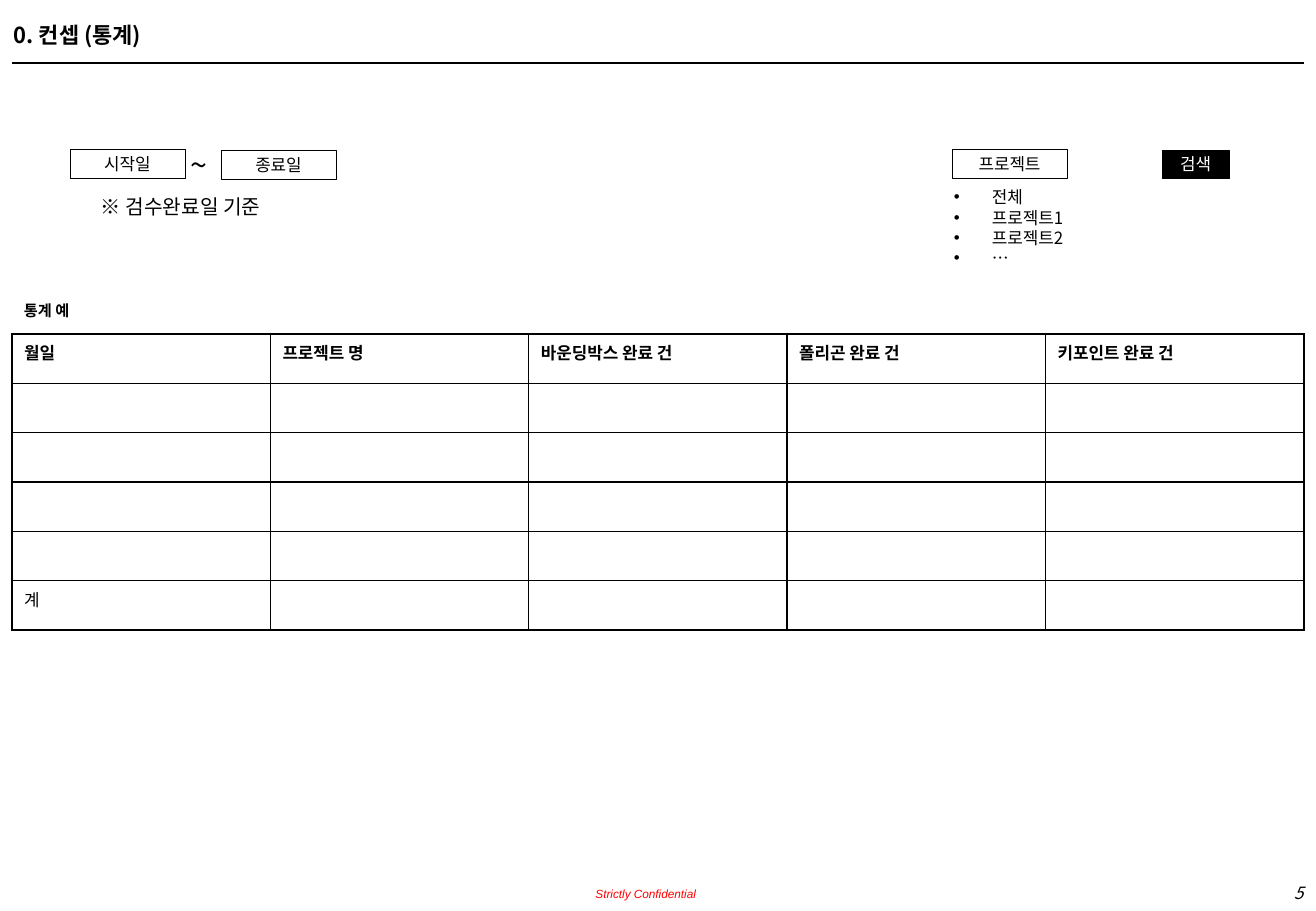
from lxml.etree import SubElement
from pptx import Presentation
from pptx.dml.color import RGBColor
from pptx.enum.shapes import MSO_CONNECTOR, MSO_SHAPE
from pptx.enum.text import MSO_ANCHOR, PP_ALIGN
from pptx.oxml import parse_xml
from pptx.oxml.ns import nsdecls, qn
from pptx.util import Pt

EMU_PER_PX = 914400 / 121.5
BLACK = RGBColor(0x00, 0x00, 0x00)
WHITE = RGBColor(0xFF, 0xFF, 0xFF)
RED = RGBColor(0xFF, 0x00, 0x00)

HEADERS = ["월일", "프로젝트 명", "바운딩박스 완료 건", "폴리곤 완료 건", "키포인트 완료 건"]
ROW_COUNT = 6
PROJECTS = ["전체", "프로젝트1", "프로젝트2", "…"]


def px(length):
    return round(length * EMU_PER_PX)


def write_text(frame, text, size=10, bold=False, italic=False, color=BLACK,
               align=PP_ALIGN.LEFT, font_name="Noto Sans CJK KR"):
    """Fill a text frame, one paragraph for each line of the text."""
    for index, line in enumerate(text.split("\n")):
        paragraph = frame.paragraphs[0] if index == 0 else frame.add_paragraph()
        paragraph.alignment = align
        if not line:
            # An empty paragraph takes its height from its end mark.
            SubElement(paragraph._p, qn("a:endParaRPr"), sz=str(size * 100))
            continue
        run = paragraph.add_run()
        run.text = line
        font = run.font
        font.name = font_name
        font.size = Pt(size)
        font.bold = bold
        font.italic = italic
        font.color.rgb = color
        SubElement(font._element, qn("a:ea"), typeface=font_name)


class SlideBuilder:
    def __init__(self, slide, line_color=BLACK):
        self.slide = slide
        self.line_color = line_color

    def text(self, left, top, width, height, text, wrap=True, inset=True,
             anchor=MSO_ANCHOR.TOP, **text_format):
        box = self.slide.shapes.add_textbox(px(left), px(top), px(width), px(height))
        frame = box.text_frame
        frame.word_wrap = wrap
        frame.vertical_anchor = anchor
        if not inset:
            frame.margin_left = frame.margin_right = 0
            frame.margin_top = frame.margin_bottom = 0
        write_text(frame, text, **text_format)
        return box

    def bullets(self, left, top, width, height, items, indent):
        box = self.text(left, top, width, height, "\n".join(items), wrap=False)
        for paragraph in box.text_frame.paragraphs:
            properties = paragraph._p.get_or_add_pPr()
            properties.set("marL", str(px(indent)))
            properties.set("indent", str(-px(indent)))
            SubElement(properties, qn("a:buFont"), typeface="Arial")
            SubElement(properties, qn("a:buChar"), char="•")

    def box(self, left, top, width, height, text, fill=None, color=BLACK):
        shape = self.slide.shapes.add_shape(
            MSO_SHAPE.RECTANGLE, px(left), px(top), px(width), px(height))
        shape.shadow.inherit = False
        if fill is None:
            shape.fill.background()
        else:
            shape.fill.solid()
            shape.fill.fore_color.rgb = fill
        shape.line.color.rgb = self.line_color
        shape.line.width = Pt(0.25)
        shape.text_frame.vertical_anchor = MSO_ANCHOR.MIDDLE
        write_text(shape.text_frame, text, color=color, align=PP_ALIGN.CENTER)

    def rule(self, left, right, top):
        connector = self.slide.shapes.add_connector(
            MSO_CONNECTOR.STRAIGHT, px(left), px(top), px(right), px(top))
        connector.line.color.rgb = self.line_color
        connector.line.width = Pt(0.75)
        SubElement(connector._element.spPr, qn("a:effectLst"))

    def table(self, left, top, width, height, rows):
        table = self.slide.shapes.add_table(
            len(rows), len(rows[0]), px(left), px(top), px(width), px(height)).table
        table.first_row = False
        table.horz_banding = False
        for row_index, row in enumerate(rows):
            for column_index, text in enumerate(row):
                cell = table.cell(row_index, column_index)
                write_text(cell.text_frame, text, bold=row_index == 0)
                cell.fill.background()
                self.cell_borders(cell)

    def cell_borders(self, cell):
        properties = cell._tc.get_or_add_tcPr()
        for index, side in enumerate(["lnL", "lnR", "lnT", "lnB"]):
            properties.insert(index, parse_xml(
                f'<a:{side} {nsdecls("a")} w="{Pt(1)}"><a:solidFill>'
                f'<a:srgbClr val="{self.line_color}"/></a:solidFill></a:{side}>'))


def main():
    presentation = Presentation()
    presentation.slide_width = px(1316)
    presentation.slide_height = px(911)
    builder = SlideBuilder(
        presentation.slides.add_slide(presentation.slide_layouts[6]))

    builder.text(510, 872, 186, 29, "Strictly Confidential", inset=False,
                 anchor=MSO_ANCHOR.BOTTOM, size=7, italic=True, color=RED,
                 align=PP_ALIGN.RIGHT, font_name="Arial")
    builder.text(1112, 877, 203, 33, "5", italic=True, align=PP_ALIGN.RIGHT)
    builder.text(2, 16, 1278, 39, "0. 컨셉 (통계)", size=13, bold=True)
    builder.rule(12, 1304, 63)

    empty_rows = [[""] * len(HEADERS) for _ in range(ROW_COUNT - 2)]
    total_row = ["계"] + [""] * (len(HEADERS) - 1)
    builder.table(12, 334, 1292, 296, [HEADERS, *empty_rows, total_row])
    builder.text(12, 295, 75, 30, "통계 예", wrap=False, size=9, bold=True)

    builder.box(952, 149, 115, 29, "프로젝트")
    builder.box(70, 149, 115, 29, "시작일")
    builder.box(221, 150, 115, 29, "종료일")
    builder.box(1162, 150, 67, 28, "검색", fill=BLACK, color=WHITE)
    builder.text(179, 140, 46, 49, "~", wrap=False, size=18)
    builder.bullets(942, 181, 141, 94, PROJECTS, indent=38)
    builder.text(89, 188, 198, 36, "※ 검수완료일 기준", wrap=False, size=12)

    presentation.save("out.pptx")


if __name__ == "__main__":
    main()
